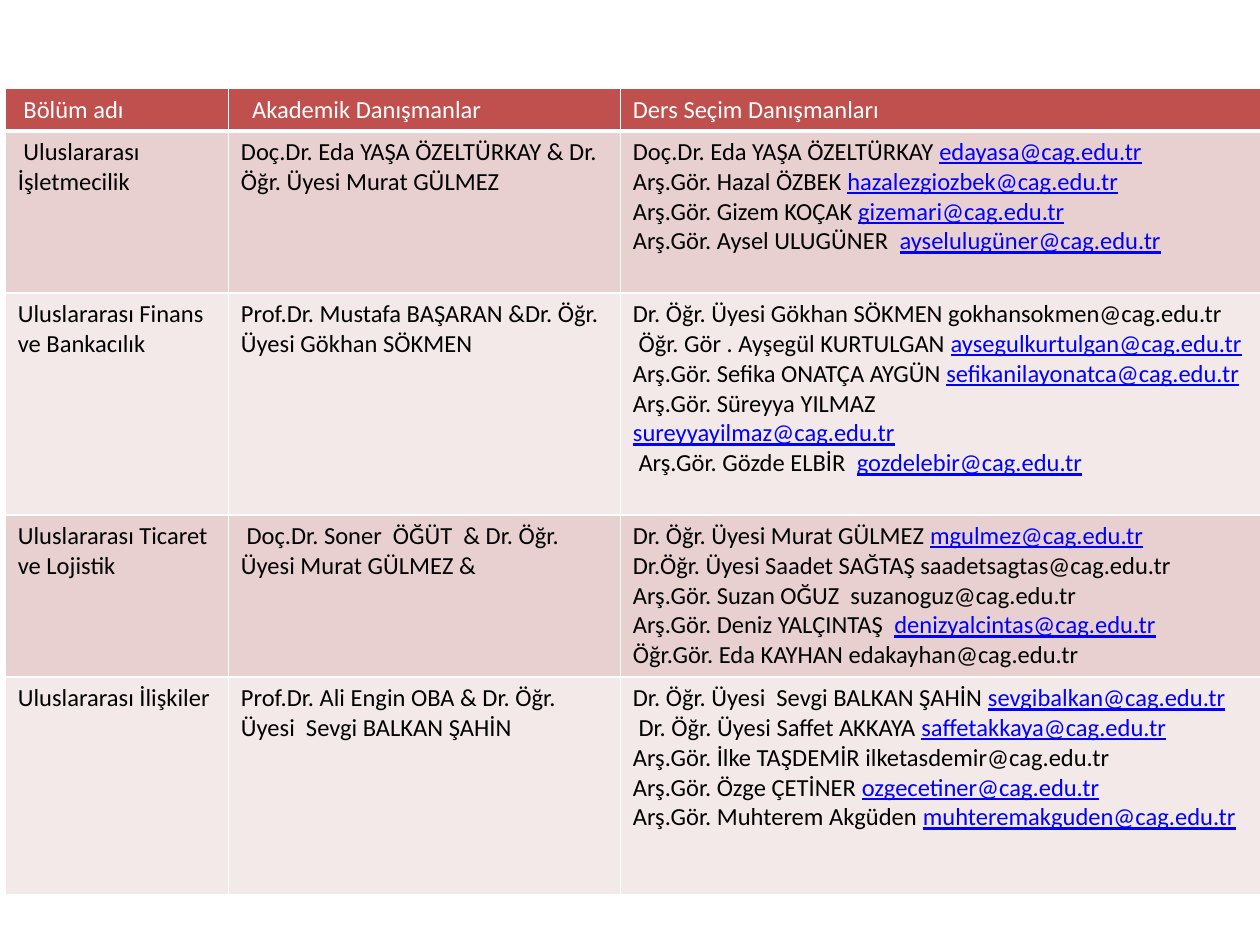
from dataclasses import dataclass

from lxml.etree import SubElement
from pptx import Presentation
from pptx.dml.color import RGBColor as RGB
from pptx.oxml.ns import qn
from pptx.util import Pt


@dataclass(frozen=True)
class Theme:
    font: str = "Calibri"
    size: int = 14
    space: float = 3.2  # width of one space at this size
    white: str = "FFFFFF"
    text: str = "000000"
    link: str = "0000FF"
    header: str = "C0504D"
    bands: tuple = ("E8D0D0", "F4E9E9")
    rule: int = 1
    header_rule: int = 3


THEME = Theme()
BOX = (3, 50.5, 720, 460)
COLUMNS = (127.5, 224, 368.5)
ROWS = (23.5, 92.5, 126.5, 92.5, 124)

HEADER = (" Bölüm adı", "  Akademik Danışmanlar", "Ders Seçim Danışmanları")

# A bar marks the start of an underlined address.
DEPARTMENTS = (
    (" Uluslararası İşletmecilik",
     "Doç.Dr. Eda YAŞA ÖZELTÜRKAY & Dr. Öğr. Üyesi Murat GÜLMEZ",
     ("Doç.Dr. Eda YAŞA ÖZELTÜRKAY |edayasa@cag.edu.tr",
      "Arş.Gör. Hazal ÖZBEK |hazalezgiozbek@cag.edu.tr",
      "Arş.Gör. Gizem KOÇAK |gizemari@cag.edu.tr",
      "Arş.Gör. Aysel ULUGÜNER  |ayselulugüner@cag.edu.tr")),
    ("Uluslararası Finans ve Bankacılık",
     "Prof.Dr. Mustafa BAŞARAN &Dr. Öğr. Üyesi Gökhan SÖKMEN",
     ("Dr. Öğr. Üyesi Gökhan SÖKMEN gokhansokmen@cag.edu.tr",
      " Öğr. Gör . Ayşegül KURTULGAN |aysegulkurtulgan@cag.edu.tr",
      "Arş.Gör. Sefika ONATÇA AYGÜN |sefikanilayonatca@cag.edu.tr",
      "Arş.Gör. Süreyya YILMAZ",
      "|sureyyayilmaz@cag.edu.tr",
      " Arş.Gör. Gözde ELBİR  |gozdelebir@cag.edu.tr")),
    ("Uluslararası Ticaret ve Lojistik",
     " Doç.Dr. Soner  ÖĞÜT  & Dr. Öğr. Üyesi Murat GÜLMEZ &",
     ("Dr. Öğr. Üyesi Murat GÜLMEZ |mgulmez@cag.edu.tr",
      "Dr.Öğr. Üyesi Saadet SAĞTAŞ saadetsagtas@cag.edu.tr",
      "Arş.Gör. Suzan OĞUZ  suzanoguz@cag.edu.tr",
      "Arş.Gör. Deniz YALÇINTAŞ  |denizyalcintas@cag.edu.tr",
      "Öğr.Gör. Eda KAYHAN edakayhan@cag.edu.tr")),
    ("Uluslararası İlişkiler",
     "Prof.Dr. Ali Engin OBA & Dr. Öğr. Üyesi  Sevgi BALKAN ŞAHİN",
     ("Dr. Öğr. Üyesi  Sevgi BALKAN ŞAHİN |sevgibalkan@cag.edu.tr",
      " Dr. Öğr. Üyesi Saffet AKKAYA |saffetakkaya@cag.edu.tr",
      "Arş.Gör. İlke TAŞDEMİR ilketasdemir@cag.edu.tr",
      "Arş.Gör. Özge ÇETİNER |ozgecetiner@cag.edu.tr",
      "Arş.Gör. Muhterem Akgüden |muhteremakguden@cag.edu.tr")),
)


def add_run(p, text, color, underline=False):
    r = p.add_run()
    r.text = text
    formats = {"name": THEME.font, "size": Pt(THEME.size), "bold": False,
               "underline": underline}
    for name, value in formats.items():
        setattr(r.font, name, value)
    r.font.color.rgb = RGB.from_string(color)


def write_line(p, line, color):
    """Turn leading spaces into a first-line indent and underline the address."""
    text = line.lstrip()
    indent = (len(line) - len(text)) * THEME.space
    if indent:
        p._p.get_or_add_pPr().set("indent", str(Pt(indent)))
    name, _, address = text.partition("|")
    if name:
        add_run(p, name, color)
    if address:
        add_run(p, address, THEME.link, underline=True)


def set_borders(cell, widths):
    tc_pr = cell._tc.get_or_add_tcPr()
    for side, width in widths.items():
        ln = SubElement(tc_pr, qn(f"a:ln{side}"), w=str(Pt(width)))
        fill = SubElement(ln, qn("a:solidFill"))
        SubElement(fill, qn("a:srgbClr"), val=THEME.white)


def fill_cell(cell, content, color, fill, borders):
    set_borders(cell, borders)
    cell.fill.solid()
    cell.fill.fore_color.rgb = RGB.from_string(fill)
    tf = cell.text_frame
    lines = (content,) if isinstance(content, str) else content
    for i, line in enumerate(lines):
        p = tf.add_paragraph() if i else tf.paragraphs[0]
        write_line(p, line, color)


def add_advisor_table(s, box):
    left, top, width, height = box
    table = s.shapes.add_table(len(ROWS), len(COLUMNS), Pt(left), Pt(top),
                               Pt(width), Pt(height)).table
    table.first_row = table.horz_banding = False
    for column, share in zip(table.columns, COLUMNS):
        column.width = Pt(width * share / sum(COLUMNS))
    for row, share in zip(table.rows, ROWS):
        row.height = Pt(height * share / sum(ROWS))

    for i, contents in enumerate((HEADER, *DEPARTMENTS)):
        borders = dict.fromkeys("LRTB", THEME.rule)
        if i == 0:
            color, fill = THEME.white, THEME.header
            borders["B"] = THEME.header_rule
        else:
            color, fill = THEME.text, THEME.bands[(i - 1) % 2]
            if i == 1:
                borders["T"] = THEME.header_rule
        for j, content in enumerate(contents):
            fill_cell(table.cell(i, j), content, color, fill, borders)


def main():
    prs = Presentation()
    prs.slide_width, prs.slide_height = Pt(720), Pt(540)
    s = prs.slides.add_slide(prs.slide_layouts[6])
    add_advisor_table(s, BOX)
    prs.save("out.pptx")


if __name__ == "__main__":
    main()
